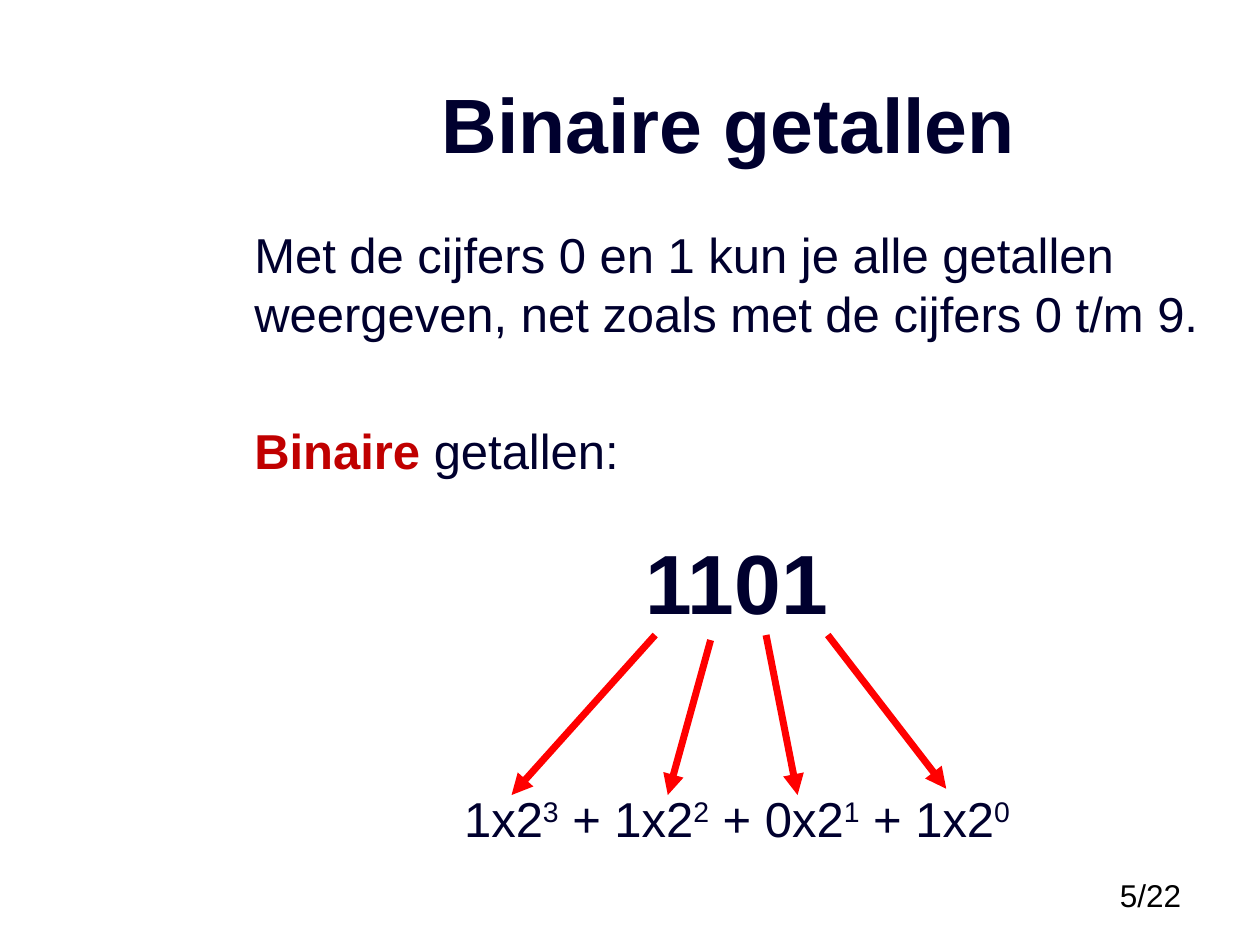
from lxml import etree
from pptx import Presentation
from pptx.dml.color import RGBColor
from pptx.enum.shapes import MSO_CONNECTOR as CONN
from pptx.enum.text import MSO_ANCHOR as ANCHOR, PP_ALIGN as ALIGN
from pptx.oxml.ns import qn
from pptx.util import Inches, Pt

NAVY, RED, ARROW_RED, BLACK = "00002E", "C00000", "FF0000", "000000"


def color(value):
    return RGBColor.from_string(value)


def add_box(s, x, y, w, h, anchor=ANCHOR.TOP):
    tf = s.shapes.add_textbox(Inches(x), Inches(y), Inches(w), Inches(h)).text_frame
    tf.word_wrap = True
    tf.vertical_anchor = anchor
    return tf


def add_paragraph(tf, align=ALIGN.LEFT, before=0):
    first = tf.paragraphs[0]
    p = tf.add_paragraph() if first.runs else first
    p.alignment = align
    if before:
        p.space_before = Pt(before)
    return p


def add_text(p, text, size=28, fill=NAVY, bold=False, raised=False):
    r = p.add_run()
    r.text = text
    r.font.name = "Arial"
    r.font.size = Pt(size)
    r.font.bold = bold
    r.font.color.rgb = color(fill)
    if raised:
        r.font._element.set("baseline", "30000")


def add_arrow(s, x1, y1, x2, y2):
    line = s.shapes.add_connector(CONN.STRAIGHT, Inches(x1), Inches(y1),
                                  Inches(x2), Inches(y2))
    line.line.color.rgb = color(ARROW_RED)
    line.line.width = Pt(4)
    etree.SubElement(line.line._get_or_add_ln(), qn("a:tailEnd"), type="triangle")
    etree.SubElement(line._element.spPr, qn("a:effectLst"))


def main():
    prs = Presentation()
    prs.slide_width, prs.slide_height = Inches(10), Inches(7.5)
    s = prs.slides.add_slide(prs.slide_layouts[6])

    # Page number and title
    add_text(add_paragraph(add_box(s, 8.79, 6.9, 1.21, 0.4)), "5/22",
             size=18, fill=BLACK)
    title = add_box(s, 1.95, 0.26, 7.67, 1.42, ANCHOR.MIDDLE)
    add_text(add_paragraph(title, ALIGN.CENTER), "Binaire getallen",
             size=44, bold=True)

    # Explanation
    body = add_box(s, 1.92, 1.73, 7.86, 5.52)
    add_text(add_paragraph(body), "Met de cijfers 0 en 1 kun je alle getallen "
             "weergeven, net zoals met de cijfers 0 t/m 9.")
    p = add_paragraph(body, before=45)
    add_text(p, "Binaire ", fill=RED, bold=True)
    add_text(p, "getallen:")

    # Binary number and its expansion in powers of two
    number = "1101"
    add_text(add_paragraph(body, ALIGN.CENTER, before=29), number,
             size=48, bold=True)
    p = add_paragraph(body, ALIGN.CENTER, before=90)
    for i, digit in enumerate(number):
        add_text(p, f"{' + ' if i else ''}{digit}x2")
        add_text(p, str(len(number) - 1 - i), raised=True)

    # Arrows from each digit to its term
    for ends in [(5.2, 5.04, 4.06, 6.31), (5.64, 5.08, 5.3, 6.31),
                 (6.08, 5.04, 6.33, 6.31), (6.57, 5.04, 7.51, 6.26)]:
        add_arrow(s, *ends)

    prs.save("out.pptx")


if __name__ == "__main__":
    main()
